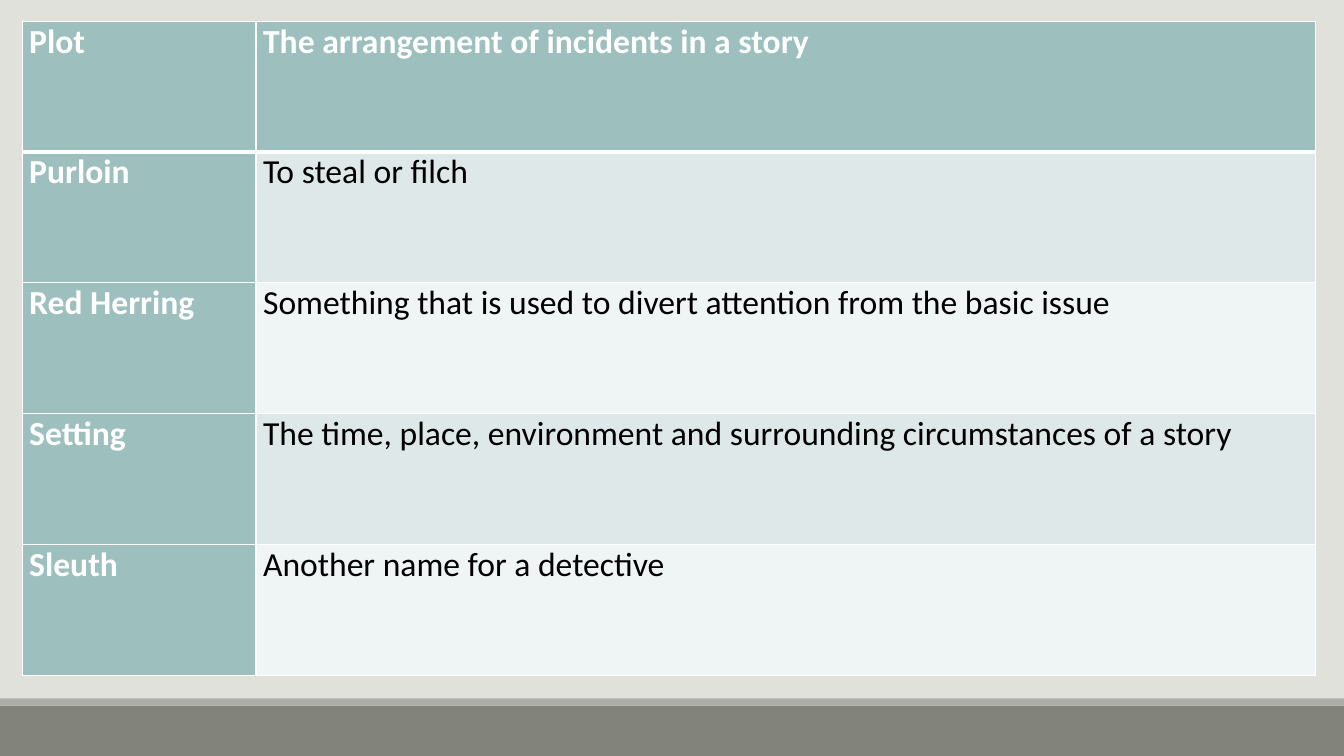
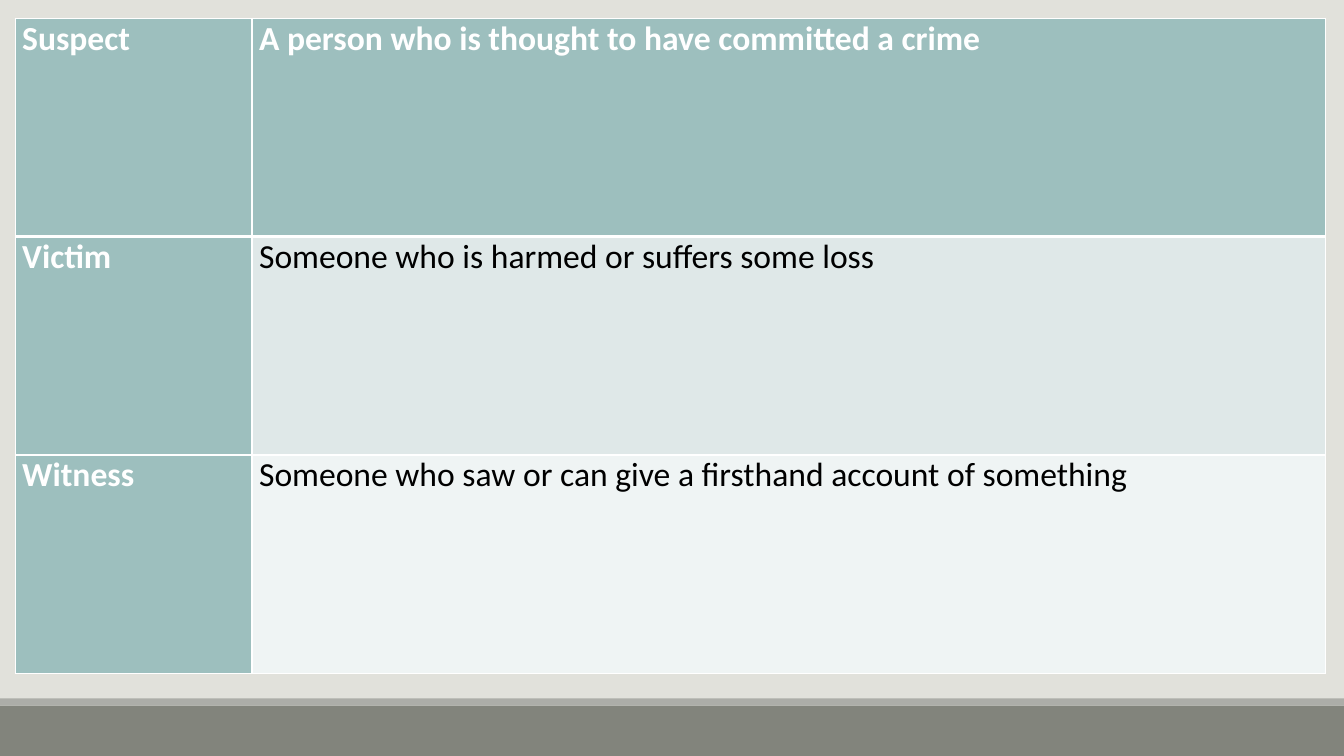
from lxml import etree
from pptx import Presentation
from pptx import util as u
from pptx.dml.color import RGBColor
from pptx.enum import shapes
from pptx.oxml import ns

BACKGROUND = RGBColor(0xE1, 0xE1, 0xDB)
FOOTER = RGBColor(0x82, 0x84, 0x7C)
FOOTER_EDGE = RGBColor(0xAC, 0xAD, 0xA8)
TEAL = RGBColor(0x9D, 0xBF, 0xBE)
ROW_BANDS = (RGBColor(0xEF, 0xF4, 0xF4), RGBColor(0xDF, 0xE8, 0xE8))
WHITE = RGBColor(0xFF, 0xFF, 0xFF)
BLACK = RGBColor(0, 0, 0)

WIDTH, HEIGHT = 13.33, 7.5
FONT, FONT_SIZE = "Calibri", 24
CELL_MARGIN = 0.07
THIN, THICK = 1, 3
BANDS = [(7, 0.5, FOOTER), (6.93, 0.07, FOOTER_EDGE)]

GLOSSARY = [
    {
        "box": (0.22, 0.21, 12.83, 6.49),
        "term_width": 2.32,
        "entries": [
            ("Plot", "The arrangement of incidents in a story"),
            ("Purloin", "To steal or filch"),
            ("Red Herring", "Something that is used to divert attention from the basic issue"),
            ("Setting", "The time, place, environment and surrounding circumstances of a story"),
            ("Sleuth", "Another name for a detective"),
        ],
    },
    {
        "box": (0.15, 0.18, 13, 6.5),
        "term_width": 2.35,
        "entries": [
            ("Suspect", "A person who is thought to have committed a crime"),
            ("Victim", "Someone who is harmed or suffers some loss"),
            ("Witness", "Someone who saw or can give a firsthand account of something"),
        ],
    },
]


def style_master(master, slide):
    background = master.background.fill
    background.solid()
    background.fore_color.rgb = BACKGROUND
    for index, (top, height, color) in enumerate(BANDS):
        band = slide.shapes.add_shape(
            shapes.MSO_SHAPE.RECTANGLE, 0, u.Inches(top), u.Inches(WIDTH), u.Inches(height))
        band.shadow.inherit = False
        band.fill.solid()
        band.fill.fore_color.rgb = color
        band.line.fill.background()
        band.element.nvSpPr.cNvPr.set("id", str(100 + index))
        master.element.cSld.spTree.insert(2 + index, band.element)


def add_borders(cell, row):
    widths = {
        "lnL": THIN,
        "lnR": THIN,
        "lnT": THICK if row == 1 else THIN,
        "lnB": THICK if row == 0 else THIN,
    }
    properties = cell._tc.get_or_add_tcPr()
    for side, width in widths.items():
        line = etree.SubElement(properties, ns.qn("a:" + side), w=str(u.Pt(width)))
        fill = etree.SubElement(line, ns.qn("a:solidFill"))
        etree.SubElement(fill, ns.qn("a:srgbClr"), val=str(WHITE))


def fill_cell(cell, content, row, column):
    heading = row == 0 or column == 0
    cell.margin_left = cell.margin_right = u.Inches(CELL_MARGIN)
    cell.margin_top = cell.margin_bottom = 0
    add_borders(cell, row)
    cell.fill.solid()
    cell.fill.fore_color.rgb = TEAL if heading else ROW_BANDS[row % 2]
    run = cell.text_frame.paragraphs[0].add_run()
    run.text = content
    run.font.name = FONT
    run.font.size = u.Pt(FONT_SIZE)
    run.font.bold = heading
    run.font.color.rgb = WHITE if heading else BLACK


def add_glossary(slide, box, term_width, entries):
    left, top, width, height = (u.Inches(value) for value in box)
    table = slide.shapes.add_table(len(entries), 2, left, top, width, height).table
    table.columns[0].width = u.Inches(term_width)
    table.columns[1].width = width - u.Inches(term_width)
    for row, entry in enumerate(entries):
        for column, content in enumerate(entry):
            fill_cell(table.cell(row, column), content, row, column)


def main():
    presentation = Presentation()
    presentation.slide_width = u.Inches(WIDTH)
    presentation.slide_height = u.Inches(HEIGHT)
    blank = presentation.slide_layouts[6]
    slides = [presentation.slides.add_slide(blank) for _ in GLOSSARY]
    style_master(presentation.slide_master, slides[0])
    for slide, glossary in zip(slides, GLOSSARY):
        for placeholder in list(slide.placeholders):
            placeholder.element.getparent().remove(placeholder.element)
        add_glossary(slide, **glossary)
    presentation.save("out.pptx")


if __name__ == "__main__":
    main()
